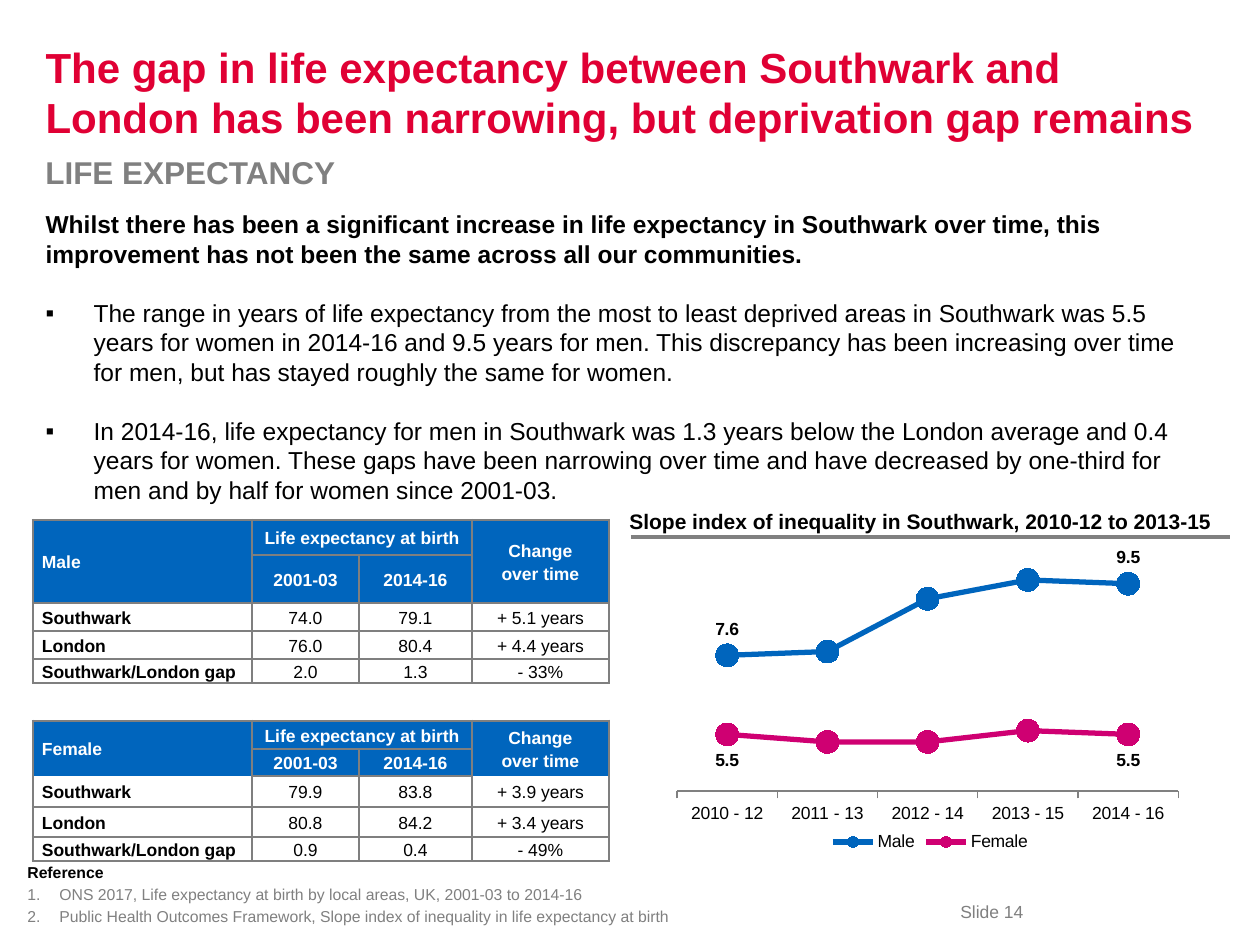
from dataclasses import dataclass
from typing import Optional

from lxml.etree import SubElement
from pptx import Presentation
from pptx.chart.data import CategoryChartData
from pptx.dml.color import RGBColor
from pptx.enum.chart import XL_CHART_TYPE as ChartType, XL_LABEL_POSITION as LabelPos
from pptx.enum.chart import XL_LEGEND_POSITION as LegendPos, XL_MARKER_STYLE as Marker
from pptx.enum.chart import XL_TICK_LABEL_POSITION as TickLabels, XL_TICK_MARK as Tick
from pptx.enum.shapes import MSO_CONNECTOR as Connector
from pptx.enum.text import MSO_ANCHOR as Anchor, MSO_AUTO_SIZE as AutoSize, PP_ALIGN as Align
from pptx.oxml.ns import qn
from pptx.util import Emu, Pt

COLORS = {"red": "E00034", "grey": "808080", "border": "7F7F7F", "black": "000000",
          "white": "FFFFFF", "blue": "0065BD", "pink": "CF0072"}
FONT = "Arial"


def px(n: int) -> Emu:
    return Emu(round(n * 914400 / 126))


def rgb(name: str) -> RGBColor:
    return RGBColor.from_string(COLORS[name])


@dataclass
class Para:
    text: str
    size: int
    color: str = "black"
    bold: bool = False
    align: Align = Align.LEFT
    before: float = 0
    spacing: Optional[float] = None
    indent: int = 0
    bullet: Optional[tuple] = None  # tag, attribute, value


@dataclass
class Series:
    name: str
    values: tuple
    color: str
    label_pos: LabelPos


def style_font(font, size: int, color: str = "black", bold: bool = False) -> None:
    for key, value in {"name": FONT, "size": Pt(size), "bold": bold}.items():
        setattr(font, key, value)
    font.color.rgb = rgb(color)


def write(tf, paras: list) -> None:
    for i, item in enumerate(paras):
        p = tf.paragraphs[0] if i == 0 else tf.add_paragraph()
        fmt = {"alignment": item.align, "space_before": Pt(item.before),
               "space_after": Pt(0), "line_spacing": item.spacing}
        for key, value in fmt.items():
            setattr(p, key, value)
        pPr = p._p.get_or_add_pPr()
        pPr.set("marL", str(px(item.indent)))
        pPr.set("indent", str(-px(item.indent)))
        if item.bullet:
            tag, key, value = item.bullet
            SubElement(pPr, qn(tag)).set(key, value)
        else:
            SubElement(pPr, qn("a:buNone"))
        r = p.add_run()
        r.text = item.text
        style_font(r.font, item.size, item.color, item.bold)


def fill_box(s, box: tuple, paras: list, anchor: Anchor = Anchor.TOP, wrap: bool = True) -> None:
    for key, value in zip(("left", "top", "width", "height"), box):
        setattr(s, key, px(value))
    tf = s.text_frame
    for key, value in {"word_wrap": wrap, "auto_size": AutoSize.NONE,
                       "vertical_anchor": anchor}.items():
        setattr(tf, key, value)
    write(tf, paras)


# Table: two blocks of five rows, parted by an empty row
COLS = (219, 107, 113, 137)
ROWS = (35, 48, 28, 28, 24, 38, 28, 27, 31, 30, 24)
BLOCK = 6
GAP = 5
TABLES = {
    "Male": (("Southwark", "74.0", "79.1", "+ 5.1 years"),
             ("London", "76.0", "80.4", "+ 4.4 years"),
             ("Southwark/London gap", "2.0", "1.3", "- 33%")),
    "Female": (("Southwark", "79.9", "83.8", "+ 3.9 years"),
               ("London", "80.8", "84.2", "+ 3.4 years"),
               ("Southwark/London gap", "0.9", "0.4", "- 49%")),
}


def region(row: int, col: int):
    """Top-left cell of the merged area; None outside both blocks."""
    if not (0 <= row < len(ROWS) and 0 <= col < len(COLS)) or row == GAP:
        return None
    r = row % BLOCK
    if r < 2 and col in (0, 3):
        return row - r, col
    return (row, 1) if r == 0 else (row, col)


def draw_borders(tcPr, row: int, col: int) -> None:
    here = region(row, col)
    for tag, dr, dc in (("a:lnL", 0, -1), ("a:lnR", 0, 1), ("a:lnT", -1, 0), ("a:lnB", 1, 0)):
        there = region(row + dr, col + dc)
        ln = SubElement(tcPr, qn(tag))
        if here == there:
            SubElement(ln, qn("a:noFill"))
            continue
        ln.set("w", str(Pt(1.5 if None in (here, there) else 1)))
        SubElement(SubElement(ln, qn("a:solidFill")), qn("a:srgbClr")).set("val", COLORS["border"])


def draw_table(slide, left: int, top: int) -> None:
    table = slide.shapes.add_table(len(ROWS), len(COLS), px(left), px(top),
                                   px(sum(COLS)), px(sum(ROWS))).table
    table.first_row = table.horz_banding = False
    for lines, sizes in ((table.columns, COLS), (table.rows, ROWS)):
        for line, size in zip(lines, sizes):
            if lines is table.columns:
                line.width = px(size)
            else:
                line.height = px(size)
    texts = {}
    for b, (name, rows) in enumerate(TABLES.items()):
        head = b * BLOCK
        texts.update({(head, 0): name, (head, 1): "Life expectancy at birth",
                      (head, 3): "Change\nover time",
                      (head + 1, 1): "2001-03", (head + 1, 2): "2014-16"})
        texts.update({(head + 2 + i, c): text for i, row in enumerate(rows)
                      for c, text in enumerate(row)})
        for start, end in (((0, 0), (1, 0)), ((0, 1), (0, 2)), ((0, 3), (1, 3))):
            table.cell(head + start[0], start[1]).merge(table.cell(head + end[0], end[1]))
    for row in range(len(ROWS)):
        for col in range(len(COLS)):
            cell = table.cell(row, col)
            header = row != GAP and row % BLOCK < 2
            for key, value in {"margin_left": px(9), "margin_right": px(9), "margin_top": 0,
                               "margin_bottom": 0, "vertical_anchor": Anchor.MIDDLE}.items():
                setattr(cell, key, value)
            draw_borders(cell._tc.get_or_add_tcPr(), row, col)
            if header:
                cell.fill.solid()
                cell.fill.fore_color.rgb = rgb("blue")
            else:
                cell.fill.background()
            if (row, col) in texts:
                write(cell.text_frame, [
                    Para(text, 10, "white" if header else "black", header or col == 0,
                         Align.CENTER if col else Align.LEFT, spacing=1.15)
                    for text in texts[row, col].split("\n")])
            else:
                SubElement(cell.text_frame.paragraphs[0]._p, qn("a:endParaRPr")).set("sz", "1000")


def draw_chart(slide, box: tuple, cats: tuple, series: list) -> None:
    data = CategoryChartData(number_format="0.0")
    data.categories = cats
    for item in series:
        data.add_series(item.name, item.values)
    chart = slide.shapes.add_chart(ChartType.LINE_MARKERS, *map(px, box), data).chart
    style_font(chart.font, 10)
    chart.has_title = False
    chart.has_legend = True
    chart.legend.position = LegendPos.BOTTOM
    chart.legend.include_in_layout = False
    axis = chart.value_axis
    for key, value in {"minimum_scale": 4, "maximum_scale": 10, "visible": False,
                       "has_major_gridlines": False}.items():
        setattr(axis, key, value)
    axis = chart.category_axis
    axis.major_tick_mark = Tick.OUTSIDE
    axis.tick_label_position = TickLabels.LOW
    axis.format.line.color.rgb = rgb("grey")
    plot = chart.plots[0]
    plot.vary_by_categories = False
    for item, ser in zip(series, plot.series):
        ser.smooth = False
        ser.format.line.color.rgb = rgb(item.color)
        ser.format.line.width = Pt(3)
        ser.marker.style, ser.marker.size = Marker.CIRCLE, 13
        ser.marker.format.fill.solid()
        ser.marker.format.fill.fore_color.rgb = rgb(item.color)
        ser.marker.format.line.color.rgb = rgb(item.color)
        for i in (0, len(cats) - 1):
            label = ser.points[i].data_label
            style_font(label.font, 10, bold=True)
            label.position = item.label_pos
    # Fixed inner plot area
    area = chart._chartSpace.find(".//" + qn("c:plotArea"))
    for old in area.findall(qn("c:layout")):
        area.remove(old)
    layout = SubElement(area, qn("c:layout"))
    area.insert(0, layout)
    manual = SubElement(layout, qn("c:manualLayout"))
    for tag, value in (("layoutTarget", "inner"), ("xMode", "edge"), ("yMode", "edge"),
                       ("x", "0.04"), ("y", "0.07"), ("w", "0.91"), ("h", "0.72")):
        SubElement(manual, qn("c:" + tag)).set("val", value)


def main() -> None:
    prs = Presentation()
    prs.slide_width, prs.slide_height = px(1260), px(945)
    slide = prs.slides.add_slide(prs.slide_layouts[1])

    # Title and main points
    fill_box(slide.shapes.title, (33, 26, 1176, 131), [Para(
        "The gap in life expectancy between Southwark and London has been narrowing, "
        "but deprivation gap remains", 24, "red", True)], Anchor.MIDDLE)
    square = {"before": 17, "indent": 48, "bullet": ("a:buChar", "char", "▪")}
    fill_box(slide.placeholders[1], (33, 203, 1176, 621), [
        Para("Whilst there has been a significant increase in life expectancy in Southwark over "
             "time, this improvement has not been the same across all our communities.",
             14, bold=True),
        Para("The range in years of life expectancy from the most to least deprived areas in "
             "Southwark was 5.5 years for women in 2014-16 and 9.5 years for men. This "
             "discrepancy has been increasing over time for men, but has stayed roughly the "
             "same for women.", 14, **square),
        Para("In 2014-16, life expectancy for men in Southwark was 1.3 years below the London "
             "average and 0.4 years for women. These gaps have been narrowing over time and "
             "have decreased by one-third for men and by half for women since 2001-03.",
             14, **square)])

    # Subtitle, references, chart heading and slide number
    number = {"before": 1.8, "indent": 32, "bullet": ("a:buAutoNum", "type", "arabicPeriod")}
    boxes = (
        ((33, 147, 607, 50), [Para("LIFE EXPECTANCY", 18, "grey", True)], Anchor.TOP, True),
        ((15, 854, 901, 78), [
            Para("Reference", 9, bold=True),
            Para("ONS 2017, Life expectancy at birth by local areas, UK, 2001-03 to 2014-16",
                 9, "grey", **number),
            Para("Public Health Outcomes Framework, Slope index of inequality in life "
                 "expectancy at birth", 9, "grey", **number)], Anchor.BOTTOM, True),
        ((617, 502, 627, 38), [Para("Slope index of inequality in Southwark, 2010-12 to 2013-15",
                                    12, bold=True)], Anchor.TOP, True),
        ((948, 895, 91, 34), [Para("Slide 14", 10, "grey")], Anchor.TOP, False),
    )
    for box, paras, anchor, wrap in boxes:
        fill_box(slide.shapes.add_textbox(*map(px, box)), box, paras, anchor, wrap)

    # Rule under the chart heading
    s = slide.shapes.add_connector(Connector.STRAIGHT, px(631), px(537), px(1230), px(537))
    s.line.color.rgb = rgb("grey")
    s.line.width = Pt(2)
    SubElement(s._element.spPr, qn("a:effectLst"))

    draw_chart(slide, (655, 543, 551, 314),
               ("2010 - 12", "2011 - 13", "2012 - 14", "2013 - 15", "2014 - 16"),
               [Series("Male", (7.6, 7.7, 9.1, 9.6, 9.5), "blue", LabelPos.ABOVE),
                Series("Female", (5.5, 5.3, 5.3, 5.6, 5.5), "pink", LabelPos.BELOW)])
    draw_table(slide, 33, 520)
    prs.save("out.pptx")


if __name__ == "__main__":
    main()
